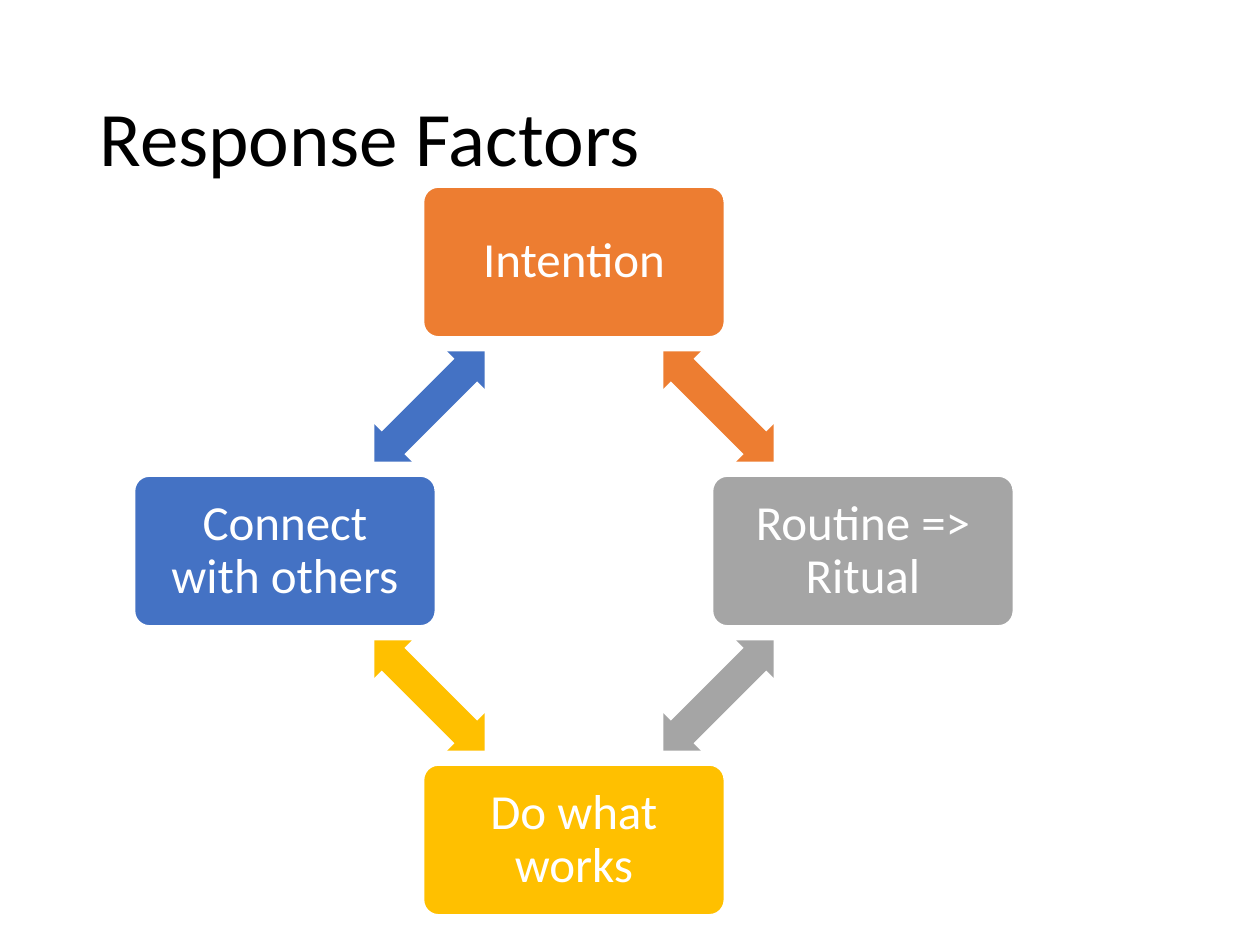
from math import cos, radians, sin

from pptx import Presentation
from pptx.dml.color import RGBColor
from pptx.enum.shapes import MSO_SHAPE
from pptx.enum.text import MSO_ANCHOR, PP_ALIGN
from pptx.util import Emu, Pt

ROUND_RECT = MSO_SHAPE.ROUNDED_RECTANGLE
ARROW = MSO_SHAPE.LEFT_RIGHT_ARROW
LEFT, CENTER = PP_ALIGN.LEFT, PP_ALIGN.CENTER
MIDDLE = MSO_ANCHOR.MIDDLE

EMU_PER_PX = 914400 / 126
FONT = "Calibri"
COLORS = {
    "black": "000000",
    "white": "FFFFFF",
    "orange": "ED7D31",
    "gray": "A5A5A5",
    "gold": "FFC000",
    "blue": "4472C4",
}

# Clockwise from the top of the cycle
FACTORS = [
    ("Intention", "orange"),
    ("Routine => Ritual", "gray"),
    ("Do what works", "gold"),
    ("Connect with others", "blue"),
]
CENTER_X, CENTER_Y, RADIUS = 574, 551, 289
BOX_W, BOX_H = 301, 150
ARROW_W, ARROW_H = 156, 53
BOX_INSET = 19


def px(n):
    return Emu(round(n * EMU_PER_PX))


def rgb(name):
    return RGBColor.from_string(COLORS[name])


def set_text(shape, text, size, color, align, inset=None):
    tf = shape.text_frame
    tf.word_wrap = True
    tf.vertical_anchor = MIDDLE
    if inset is not None:
        tf.margin_left = tf.margin_right = px(inset)
        tf.margin_top = tf.margin_bottom = px(inset)
    p = tf.paragraphs[0]
    p.alignment = align
    p.line_spacing = 0.9
    r = p.add_run()
    r.text = text
    r.font.name = FONT
    r.font.size = Pt(size)
    r.font.color.rgb = rgb(color)


def add_title(s, text):
    title = s.shapes.title
    title.left, title.top, title.width, title.height = map(px, (87, 50, 1086, 183))
    set_text(title, text, size=44, color="black", align=LEFT)


def add_centered_shape(s, kind, x, y, w, h, fill, adjustments):
    """Add a filled preset shape whose middle is at x, y."""
    sp = s.shapes.add_shape(kind, px(x - w / 2), px(y - h / 2), px(w), px(h))
    sp.shadow.inherit = False
    sp.fill.solid()
    sp.fill.fore_color.rgb = rgb(fill)
    sp.line.fill.background()
    for i, value in enumerate(adjustments):
        sp.adjustments[i] = value
    return sp


def add_factor(s, x, y, text, color):
    sp = add_centered_shape(s, ROUND_RECT, x, y, BOX_W, BOX_H, color, [0.1])
    sp.line.color.rgb = rgb("white")
    sp.line.width = Pt(1)
    set_text(sp, text, size=28, color="white", align=CENTER, inset=BOX_INSET)


def add_arrow(s, x, y, rotation, color):
    sp = add_centered_shape(s, ARROW, x, y, ARROW_W, ARROW_H, color, [0.6, 0.5])
    sp.rotation = rotation


def add_cycle(s, factors):
    """Place the factors on a circle, with an arrow midway to each next one."""
    step = 360 / len(factors)
    angles = [radians(i * step) for i in range(len(factors))]
    points = [(CENTER_X + RADIUS * sin(a), CENTER_Y - RADIUS * cos(a)) for a in angles]
    for i, (text, color) in enumerate(factors):
        x, y = points[i]
        next_x, next_y = points[(i + 1) % len(points)]
        add_factor(s, x, y, text, color)
        add_arrow(s, (x + next_x) / 2, (y + next_y) / 2, (i + 0.5) * step, color)


def main():
    prs = Presentation()
    prs.slide_width, prs.slide_height = px(1260), px(945)
    s = prs.slides.add_slide(prs.slide_layouts.get_by_name("Title Only"))
    add_title(s, "Response Factors")
    add_cycle(s, FACTORS)
    prs.save("out.pptx")


if __name__ == "__main__":
    main()
